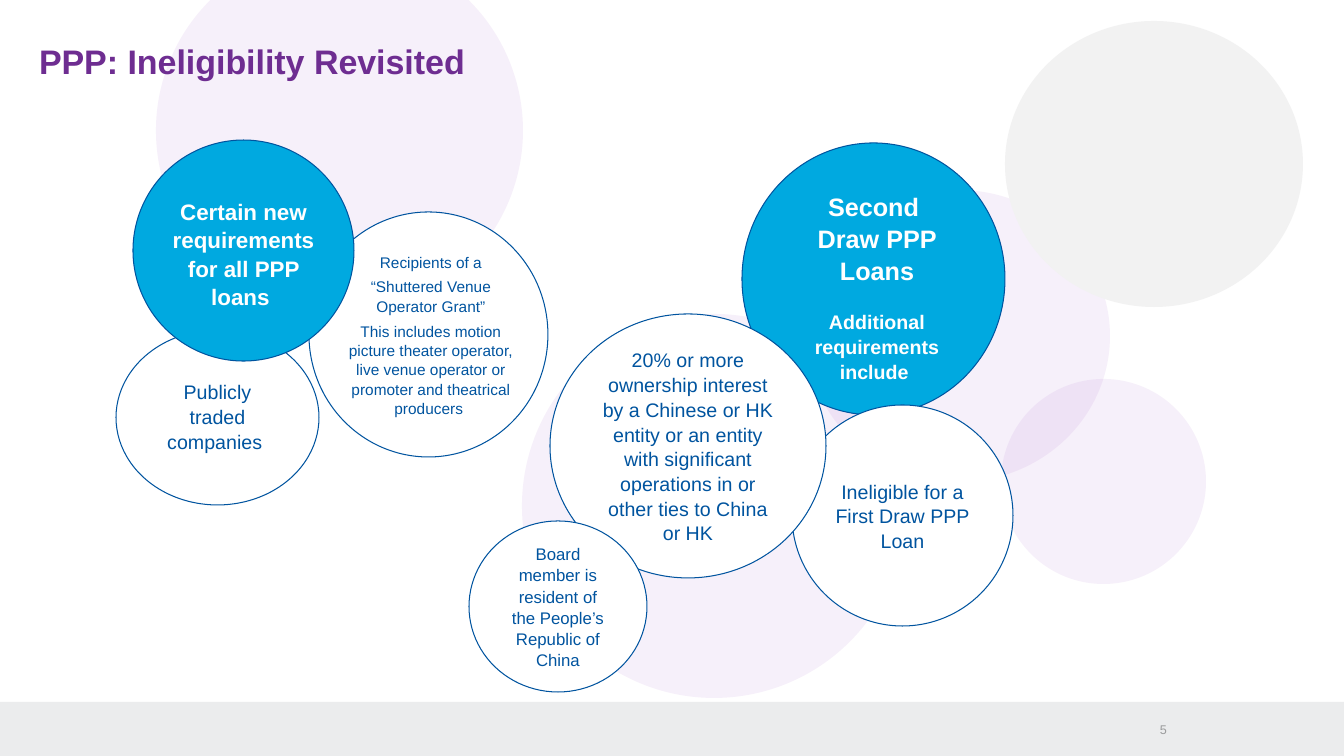
"""Build the slide on PPP loan ineligibility as clusters of overlapping circles."""
from lxml import etree
from pptx import Presentation
from pptx import util as u
from pptx.dml.color import RGBColor
from pptx.enum import shapes, text
from pptx.oxml.ns import qn

PX = 914400 / 100.8
BLUE, CYAN, WHITE, LILAC, PURPLE = "00549F", "00A9E0", "FFFFFF", "AE6CD2", "6E2D91"


def add_shape(kind, place, fill, line=None, opacity=100):
    shape = page.shapes.add_shape(kind, *[u.Emu(round(n * PX)) for n in place])
    shape.shadow.inherit = False
    shape.fill.solid()
    shape.fill.fore_color.rgb = RGBColor.from_string(fill)
    if opacity < 100:
        color = shape.fill._xPr.find(qn("a:solidFill"))[0]
        etree.SubElement(color, qn("a:alpha")).set("val", str(opacity * 1000))
    if line:
        shape.line.color.rgb = RGBColor.from_string(line)
        shape.line.width = u.Pt(0.75)
    else:
        shape.line.fill.background()
    return shape


def write(box, paragraphs, color, bold=False, align=text.PP_ALIGN.CENTER,
          anchor=text.MSO_ANCHOR.TOP, after=0, spacing=1.05, inset=None):
    frame = box.text_frame
    frame.word_wrap = True
    frame.auto_size = text.MSO_AUTO_SIZE.NONE
    frame.vertical_anchor = anchor
    if inset is not None:
        frame.margin_left = frame.margin_right = inset
        frame.margin_top = frame.margin_bottom = inset
    for index, (words, size, before) in enumerate(paragraphs):
        para = frame.paragraphs[0] if index == 0 else frame.add_paragraph()
        para.alignment = align
        para.line_spacing = spacing
        para.space_before, para.space_after = u.Pt(before), u.Pt(after)
        span = para.add_run()
        span.text = words
        span.font.name, span.font.size, span.font.bold = "Arial", u.Pt(size), bold
        span.font.color.rgb = RGBColor.from_string(color)


deck = Presentation()
deck.slide_width, deck.slide_height = u.Emu(round(1344 * PX)), u.Emu(round(756 * PX))
page = deck.slides.add_slide(deck.slide_layouts[5])
OVAL = shapes.MSO_SHAPE.OVAL

add_shape(shapes.MSO_SHAPE.RECTANGLE, (-1, 702, 1345, 54), "EBECED")
for place in [(156, -53, 367, 367), (522, 314, 384, 384),
              (807, 190, 303, 292), (1001, 379, 205, 205)]:
    add_shape(OVAL, place, LILAC, opacity=10)
add_shape(OVAL, (1005, 21, 298, 286), "F2F2F2")

title = page.shapes.title
title.left, title.top, title.width, title.height = [
    u.Emu(round(n * PX)) for n in (39, 40, 1263, 43)]
write(title, [("PPP: Ineligibility Revisited", 24.3, 0)], PURPLE, bold=True,
      align=text.PP_ALIGN.LEFT, spacing=1, inset=0)
page.shapes._spTree.append(title._element)

number = page.shapes.add_textbox(*[u.Emu(round(n * PX)) for n in (1151, 721, 16, 16)])
write(number, [("5", 9, 0)], "9A9B9C", align=text.PP_ALIGN.RIGHT,
      anchor=text.MSO_ANCHOR.MIDDLE, spacing=1, inset=0)

second_draw = [("Second ", 18, 0), ("Draw PPP Loans", 18, 0),
               ("Additional requirements include ", 14, 17)]
ownership = [("20% or more ownership interest by a Chinese or HK entity or an entity "
              "with significant operations in or other ties to China or HK", 14, 0)]
venue_grant = [("Recipients of a", 11, 0), ("“Shuttered Venue Operator Grant”", 11, 0),
               ("This includes motion picture theater operator, live venue operator "
                "or promoter and theatrical producers ", 11, 0)]
board = [("Board member is resident of the People’s Republic of China", 12, 0)]

bubbles = [
    ((742, 143, 263, 272), CYAN, (785, 185, 184, 228), second_draw),
    ((792, 405, 221, 221), WHITE, None, [("Ineligible for a First Draw PPP Loan", 14, 0)]),
    ((550, 314, 276, 264), WHITE, None, ownership),
    ((116, 330, 203, 175), WHITE, (149, 374, 137, 90),
     [("Publicly traded companies ", 14, 0)]),
    ((309, 212, 239, 245), WHITE, (334, 247, 194, 200), venue_grant),
    ((133, 140, 221, 221), CYAN, (159, 192, 169, 119),
     [("Certain new requirements for all PPP loans ", 16, 0)]),
    ((469, 521, 178, 171), WHITE, None, board),
]
labels = []
for place, fill, label_place, paragraphs in bubbles:
    bubble = add_shape(OVAL, place, fill, BLUE)
    heading = fill == CYAN
    style = {"color": WHITE if heading else BLUE, "bold": heading,
             "after": 0 if heading else 3.8}
    if label_place:
        label = page.shapes.add_textbox(*[u.Emu(round(n * PX)) for n in label_place])
        write(label, paragraphs, **style)
    else:
        write(bubble, paragraphs, anchor=text.MSO_ANCHOR.MIDDLE, **style)

deck.save("out.pptx")
